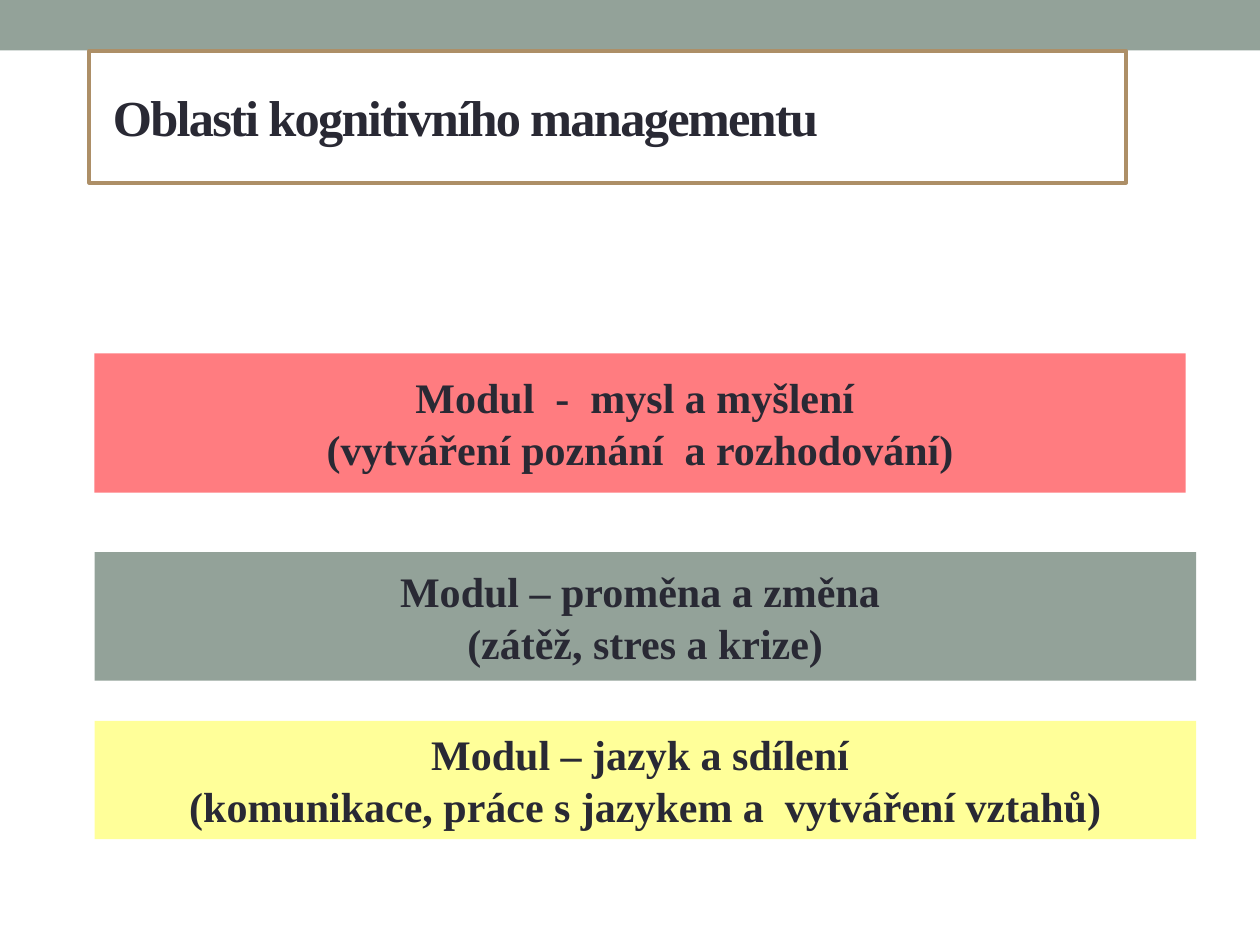
"""Build the slide on the areas of cognitive management."""
from pptx import Presentation
from pptx.dml.color import RGBColor
from pptx.enum.shapes import MSO_SHAPE
from pptx.enum.text import MSO_ANCHOR, PP_ALIGN
from pptx.util import Pt


def rgb(value):
    return RGBColor.from_string(value)


def add_box(s, left, top, width, height, fill, lines=(), size=24, align=PP_ALIGN.CENTER):
    sp = s.shapes.add_shape(MSO_SHAPE.RECTANGLE, Pt(left), Pt(top), Pt(width), Pt(height))
    sp.shadow.inherit = False
    sp.fill.solid()
    sp.fill.fore_color.rgb = rgb(fill)
    sp.line.fill.background()
    tf = sp.text_frame
    tf.vertical_anchor = MSO_ANCHOR.MIDDLE
    for i, line in enumerate(lines):
        p = tf.add_paragraph() if i else tf.paragraphs[0]
        p.text = line
        p.alignment = align
        p.space_before = Pt(1)
        p.font.name = "Times New Roman"
        p.font.size = Pt(size)
        p.font.bold = True
        p.font.color.rgb = rgb("292934")
    return sp


prs = Presentation()
prs.slide_width, prs.slide_height = Pt(720), Pt(540)
s = prs.slides.add_slide(prs.slide_layouts[6])

add_box(s, 0, 0, 720, 28.8, "93A299")

title = add_box(s, 51, 29, 592.5, 75.5, "FFFFFF",
                ["Oblasti kognitivního managementu"], 28.8, PP_ALIGN.LEFT)
title.line.color.rgb = rgb("AD8F67")
title.line.width = Pt(2.08)
title.text_frame.margin_left = Pt(13.5)
title.text_frame.paragraphs[0].runs[0]._r.get_or_add_rPr().set("spc", "-100")

modules = [
    (202, 623.5, 79.5, "FF7C80",
     ["Modul  -  mysl a myšlení ", "(vytváření poznání  a rozhodování)"]),
    (315.5, 629.5, 73.5, "93A299",
     ["Modul – proměna a změna ", "(zátěž, stres a krize)"]),
    (412, 629.5, 67.5, "FFFF99",
     ["Modul – jazyk a sdílení ", "(komunikace, práce s jazykem a  vytváření vztahů)"]),
]
for top, width, height, fill, lines in modules:
    sp = add_box(s, 54, top, width, height, fill, lines)
    sp.text_frame.word_wrap = False

prs.save("out.pptx")
